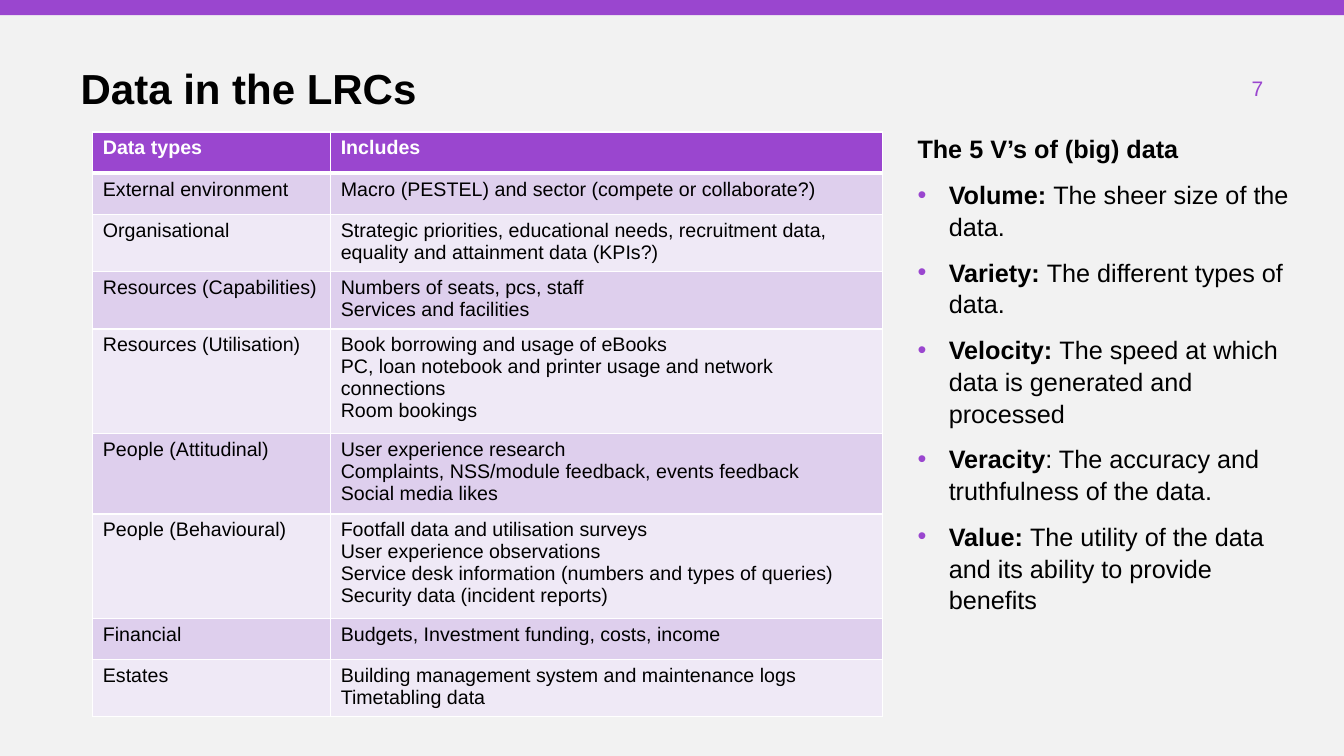
from dataclasses import dataclass
from lxml.etree import SubElement
from pptx import Presentation
from pptx.dml.color import RGBColor
from pptx.enum.shapes import MSO_SHAPE
from pptx.enum.text import MSO_ANCHOR, PP_ALIGN
from pptx.oxml.ns import qn
from pptx.util import Inches, Pt


@dataclass(frozen=True)
class Theme:
    """Colours, font and type sizes of the deck."""
    font: str = "Arial"
    back: str = "F2F2F2"
    main: str = "9A46CF"
    ink: str = "000000"
    white: str = "FFFFFF"
    bands: tuple = ("EFE9F6", "DECFED")
    title: int = 30
    body: int = 18
    page: int = 15
    cell: int = 14


def paint(fill, tone):
    """Fill with one solid colour."""
    fill.solid()
    fill.fore_color.rgb = RGBColor.from_string(tone)


class Deck:
    """Draws styled elements on the current slide."""

    def __init__(self, theme):
        """Open a wide deck with one blank slide."""
        self.theme = theme
        self.file = Presentation()
        self.file.slide_width = Inches(13.33)
        self.file.slide_height = Inches(7.5)
        self.slide = self.file.slides.add_slide(self.file.slide_layouts[6])
        paint(self.slide.background.fill, theme.back)

    def run(self, para, text, size, tone, bold=False):
        """Add one styled run."""
        run = para.add_run()
        run.text = text
        run.font.name = self.theme.font
        run.font.size = Pt(size)
        run.font.bold = bold
        run.font.color.rgb = RGBColor.from_string(tone)

    def bar(self, *box):
        """Draw a plain bar."""
        bar = self.slide.shapes.add_shape(MSO_SHAPE.RECTANGLE, *map(Inches, box))
        bar.shadow.inherit = False
        paint(bar.fill, self.theme.main)
        bar.line.fill.background()

    def frame(self, *box):
        """Add a wrapping text box without insets."""
        frame = self.slide.shapes.add_textbox(*map(Inches, box)).text_frame
        frame.word_wrap = True
        frame.margin_left = frame.margin_right = 0
        frame.margin_top = frame.margin_bottom = 0
        return frame

    def title(self, text, *box):
        """Write the slide title."""
        para = self.frame(*box).paragraphs[0]
        para.line_spacing = 0.9
        self.run(para, text, self.theme.title, self.theme.ink, True)

    def page(self, text, *box):
        """Write the page number."""
        frame = self.frame(*box)
        frame.vertical_anchor = MSO_ANCHOR.MIDDLE
        para = frame.paragraphs[0]
        para.alignment = PP_ALIGN.RIGHT
        self.run(para, text, self.theme.page, self.theme.main)

    def bullet(self, para):
        """Give a paragraph a hanging bullet."""
        props = para._p.get_or_add_pPr()
        props.set("marL", str(Inches(0.31)))
        props.set("indent", str(-Inches(0.31)))
        tint = SubElement(props, qn("a:buClr"))
        SubElement(tint, qn("a:srgbClr"), val=self.theme.main)
        SubElement(props, qn("a:buFont"), typeface=self.theme.font)
        SubElement(props, qn("a:buChar"), char="•")

    def points(self, head, items, *box):
        """Write a heading and its bulleted terms."""
        look = self.theme.body, self.theme.ink
        frame = self.frame(*box)
        para = frame.paragraphs[0]
        para.line_spacing = 1.05
        self.run(para, head, *look, True)
        for term, text in items:
            para = frame.add_paragraph()
            self.bullet(para)
            para.line_spacing = 1.05
            para.space_before = Pt(10)
            self.run(para, term, *look, True)
            self.run(para, text, *look)

    def edges(self, cell, base):
        """Rule a cell in white."""
        props = cell._tc.get_or_add_tcPr()
        for side, width in zip("LRTB", (1, 1, 1, base)):
            line = SubElement(props, qn(f"a:ln{side}"), w=str(Pt(width)))
            fill = SubElement(line, qn("a:solidFill"))
            SubElement(fill, qn("a:srgbClr"), val=self.theme.white)

    def table(self, rows, cols, *box):
        """Draw a banded table with a header row."""
        look = self.theme
        shape = self.slide.shapes.add_table(len(rows), len(cols), *map(Inches, box))
        grid = shape.table
        for col, width in zip(grid.columns, cols):
            col.width = Inches(width)
        for i, row in enumerate(rows):
            grid.rows[i].height = Inches(0.41)
            head = i == 0
            for j, text in enumerate(row):
                cell = grid.cell(i, j)
                self.edges(cell, 3 if head else 1)
                paint(cell.fill, look.main if head else look.bands[i % 2])
                frame = cell.text_frame
                for k, line in enumerate(text.split("\n")):
                    para = frame.add_paragraph() if k else frame.paragraphs[0]
                    tone = look.white if head else look.ink
                    self.run(para, line, look.cell, tone, head)
        shape.height = Inches(box[3])


ROWS = [
    ("Data types", "Includes"),
    ("External environment", "Macro (PESTEL) and sector (compete or collaborate?)"),
    ("Organisational", "Strategic priorities, educational needs, recruitment data, "
     "equality and attainment data (KPIs?)"),
    ("Resources (Capabilities)", "Numbers of seats, pcs, staff\nServices and facilities"),
    ("Resources (Utilisation)", "Book borrowing and usage of eBooks\n"
     "PC, loan notebook and printer usage and network connections\nRoom bookings"),
    ("People (Attitudinal)", "User experience research\n"
     "Complaints, NSS/module feedback, events feedback\nSocial media likes"),
    ("People (Behavioural)", "Footfall data and utilisation surveys\n"
     "User experience observations\n"
     "Service desk information (numbers and types of queries)\n"
     "Security data (incident reports)"),
    ("Financial", "Budgets, Investment funding, costs, income"),
    ("Estates", "Building management system and maintenance logs\nTimetabling data"),
]
TERMS = [
    ("Volume: ", "The sheer size of the data."),
    ("Variety: ", "The different types of data."),
    ("Velocity: ", "The speed at which data is generated and processed"),
    ("Veracity", ": The accuracy and truthfulness of the data."),
    ("Value: ", "The utility of the data and its ability to provide benefits"),
]


def main():
    """Build and save the slide."""
    deck = Deck(Theme())
    deck.page("7", 11.59, 0.75, 0.94, 0.25)
    deck.bar(0, 0, 13.33, 0.15)
    deck.title("Data in the LRCs", 0.8, 0.68, 10.79, 0.45)
    deck.table(ROWS, (2.36, 5.47), 0.92, 1.31, 7.83, 5.55)
    deck.points("The 5 V’s of (big) data", TERMS, 9.1, 1.31, 3.69, 5.35)
    deck.file.save("out.pptx")


if __name__ == "__main__":
    main()
